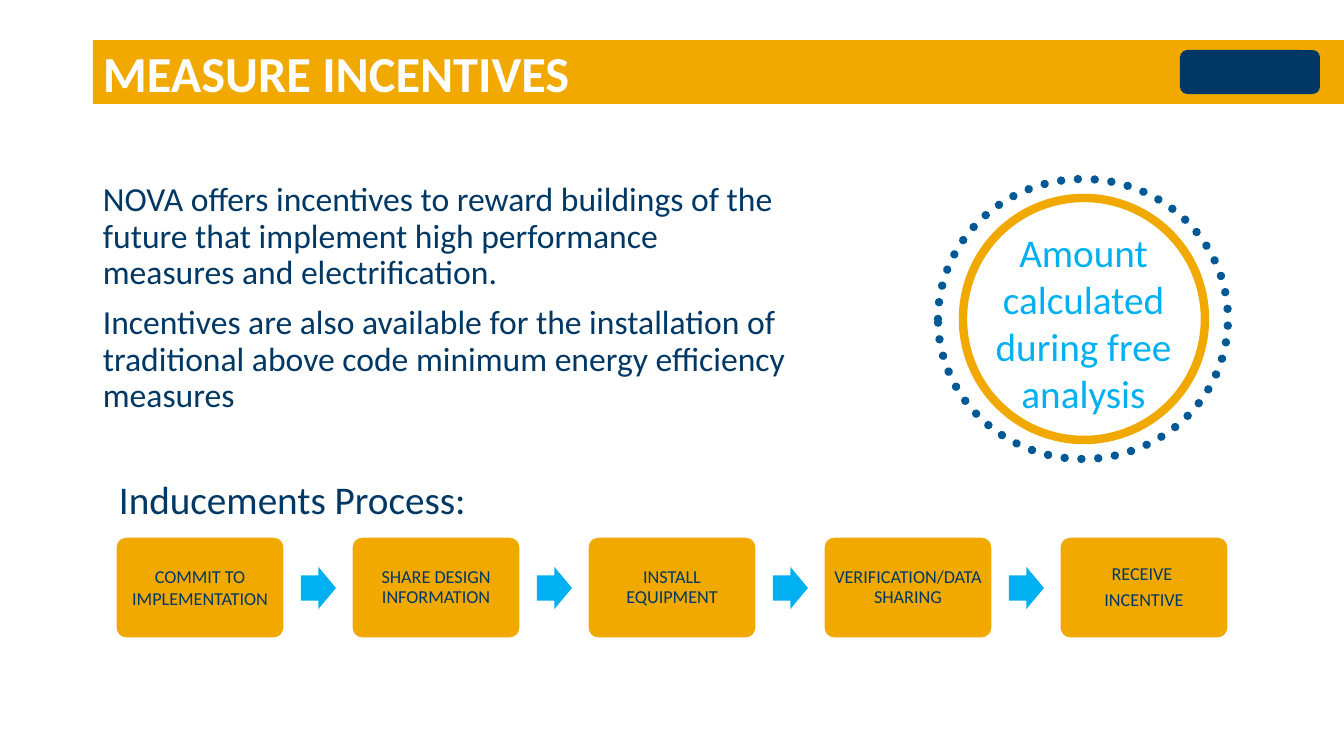
from pptx import Presentation
from pptx.dml.color import RGBColor
from pptx.enum.dml import MSO_LINE
from pptx.enum.shapes import MSO_SHAPE
from pptx.enum.text import MSO_ANCHOR, PP_ALIGN
from pptx.oxml.ns import qn
from pptx.util import Emu, Pt

RECTANGLE = MSO_SHAPE.RECTANGLE
ROUNDED = MSO_SHAPE.ROUNDED_RECTANGLE
ARROW = MSO_SHAPE.RIGHT_ARROW
OVAL = MSO_SHAPE.OVAL
DOTTED = MSO_LINE.ROUND_DOT
TOP, MIDDLE = MSO_ANCHOR.TOP, MSO_ANCHOR.MIDDLE
LEFT, CENTER = PP_ALIGN.LEFT, PP_ALIGN.CENTER

WIDTH, HEIGHT = 1344, 756
SCALE = 12192000 / WIDTH
FONT = "Calibri"
COLORS = {
    "gold": "F1A900",
    "navy": "003865",
    "blue": "005894",
    "sky": "00B0F0",
    "white": "FFFFFF",
}


def px(length):
    return Emu(round(length * SCALE))


def rgb(name):
    return RGBColor.from_string(COLORS[name])


class SlideBuilder:
    def __init__(self, slide):
        self.slide = slide

    def shape(self, kind, box, fill=None, line=None, line_width=1, adjustments=()):
        shape = self.slide.shapes.add_shape(kind, *map(px, box))
        shape.shadow.inherit = False
        for index, value in enumerate(adjustments):
            shape.adjustments[index] = value
        if fill:
            shape.fill.solid()
            shape.fill.fore_color.rgb = rgb(fill)
        else:
            shape.fill.background()
        if line:
            shape.line.color.rgb = rgb(line)
            shape.line.width = Pt(line_width)
        else:
            shape.line.fill.background()
        return shape

    def dotted_ring(self, box, color, line_width):
        ring = self.shape(OVAL, box, line=color, line_width=line_width)
        ring.line.dash_style = DOTTED
        ring._element.spPr.find(qn("a:ln")).set("cap", "rnd")

    def fill_text(self, shape, paragraphs, size, color, bold=False, align=LEFT,
                  anchor=TOP, spacing=None, before=0, after=0):
        frame = shape.text_frame
        frame.word_wrap = True
        frame.vertical_anchor = anchor
        frame.text = "\n".join(paragraphs)
        for paragraph in frame.paragraphs:
            paragraph.alignment = align
            paragraph.line_spacing = spacing
            paragraph.space_before = Pt(before)
            paragraph.space_after = Pt(after)
            for run in paragraph.runs:
                run.font.name = FONT
                run.font.size = Pt(size)
                run.font.bold = bold
                run.font.color.rgb = rgb(color)

    def text(self, box, paragraphs, size, color, **style):
        textbox = self.slide.shapes.add_textbox(*map(px, box))
        self.fill_text(textbox, paragraphs, size, color, **style)

    def step(self, box, paragraphs, spacing):
        card = self.shape(ROUNDED, box, "gold", "white", adjustments=[0.1])
        frame = card.text_frame
        frame.margin_left = frame.margin_right = px(5)
        frame.margin_top = frame.margin_bottom = px(5)
        self.fill_text(card, paragraphs, 13, "navy", align=CENTER,
                       anchor=MIDDLE, spacing=spacing, after=4.55)


def main():
    presentation = Presentation()
    presentation.slide_width, presentation.slide_height = px(WIDTH), px(HEIGHT)
    blank = presentation.slide_layouts[6]
    builder = SlideBuilder(presentation.slides.add_slide(blank))

    # Title bar with a plain emblem
    builder.shape(RECTANGLE, (93, 40, 1251, 64), "gold")
    builder.shape(ROUNDED, (1180, 50, 140, 44), "navy")
    builder.text((93, 40, 953, 64), ["MEASURE INCENTIVES"], 36, "white",
                 bold=True, anchor=MIDDLE)

    # Introduction
    introduction = [
        "NOVA offers incentives to reward buildings of the future that "
        "implement high performance measures and electrification.",
        "Incentives are also available for the installation of traditional "
        "above code minimum energy efficiency measures",
    ]
    builder.text((93, 178, 705, 289), introduction, 24, "navy",
                 spacing=0.9, before=10)

    # Process steps, joined by arrows
    builder.text((109, 470, 418, 57), ["Inducements Process:"], 28, "navy")
    steps = [
        (["COMMIT TO IMPLEMENTATION"], 1.0),
        (["SHARE DESIGN INFORMATION"], 0.9),
        (["INSTALL EQUIPMENT"], 0.9),
        (["VERIFICATION/DATA SHARING"], 0.9),
        (["RECEIVE ", "INCENTIVE"], 0.9),
    ]
    first_left, pitch, arrow_offset = 116, 236, 185
    for index, (label, spacing) in enumerate(steps):
        left = first_left + index * pitch
        if index:
            builder.shape(ARROW, (left - pitch + arrow_offset, 567, 35, 42),
                          "sky", adjustments=[0.6, 0.5])
        builder.step((left, 537, 168, 101), label, spacing)

    # Circled message
    builder.shape(OVAL, (963, 198, 242, 242), line="gold", line_width=6)
    builder.dotted_ring((938, 179, 290, 280), "blue", 6)
    builder.text((967, 223, 233, 201),
                 ["Amount calculated during free analysis"], 28, "sky",
                 align=CENTER)

    presentation.save("out.pptx")


if __name__ == "__main__":
    main()
